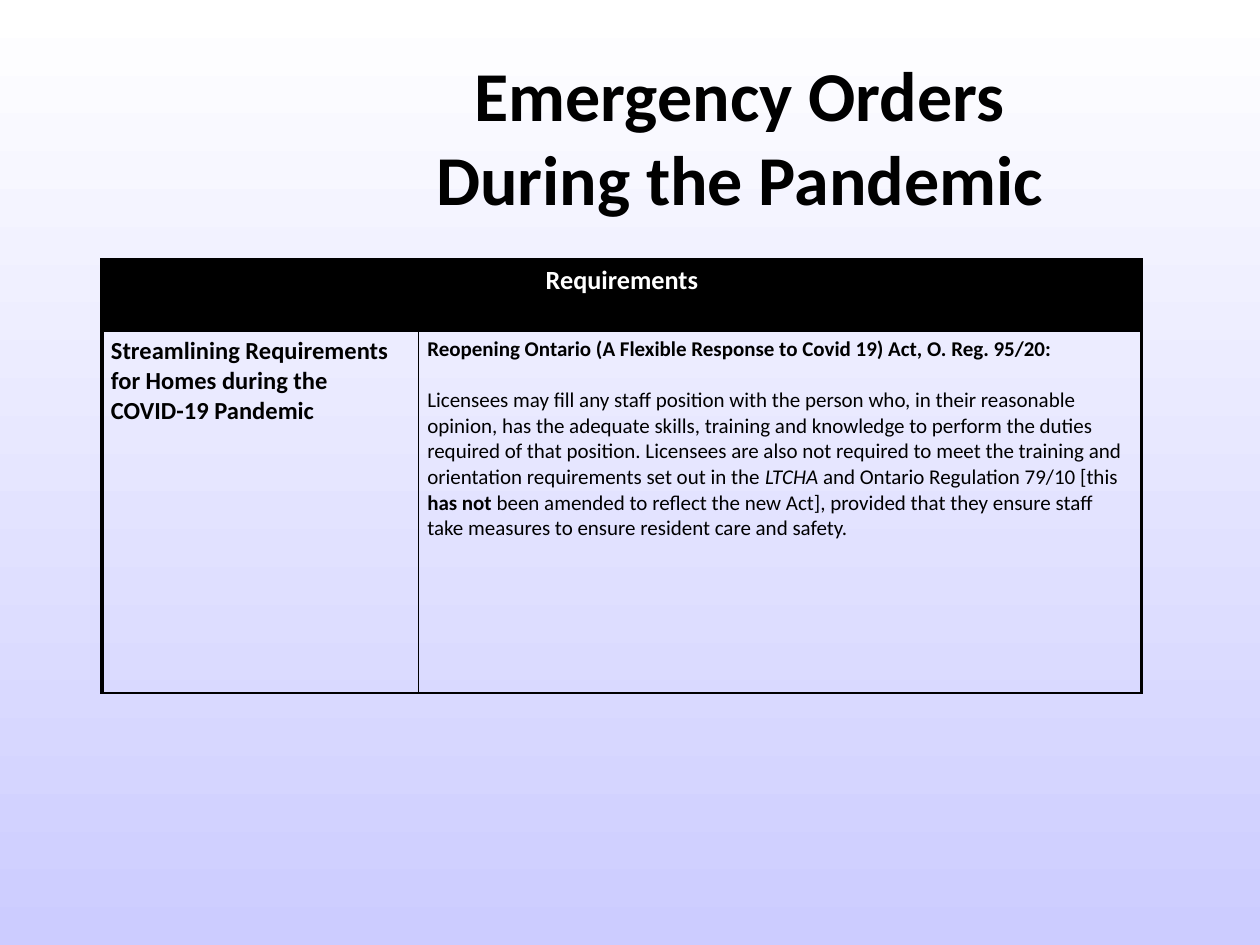
from dataclasses import dataclass

from lxml.etree import SubElement
from pptx import Presentation
from pptx.dml.color import RGBColor
from pptx.enum.text import MSO_ANCHOR, MSO_AUTO_SIZE, PP_ALIGN
from pptx.oxml.ns import qn
from pptx.util import Pt


@dataclass(frozen=True)
class Theme:
    font: str = "Calibri"
    black: RGBColor = RGBColor(0x00, 0x00, 0x00)
    white: RGBColor = RGBColor(0xFF, 0xFF, 0xFF)
    lavender: RGBColor = RGBColor(0xCC, 0xCC, 0xFF)
    title: float = 40
    header: float = 15
    topic: float = 14
    body: float = 12
    thick: float = 2.25
    thin: float = 1


THEME = Theme()

RULE = [
    ("Licensees may fill any staff position with the person who, in their "
     "reasonable opinion, has the adequate skills, training and knowledge to "
     "perform the duties required of that position. Licensees are also not "
     "required to meet the training and orientation requirements set out in "
     "the ", ""),
    ("LTCHA", "i"),
    (" and Ontario Regulation 79/10 [this ", ""),
    ("has not ", "b"),
    ("been amended to reflect the new Act], provided that they ensure staff "
     "take measures to ensure resident care and safety.", ""),
]


def set_background(slide):
    fill = slide.background.fill
    fill.gradient()
    fill.gradient_angle = 270
    for stop, position, color in zip(fill.gradient_stops, (0, 1),
                                     (THEME.white, THEME.lavender)):
        stop.position = position
        stop.color.rgb = color


def write_runs(p, runs, size, color=THEME.black):
    """Add (text, style) runs; the style holds b for bold and i for italic."""
    for text, style in runs:
        r = p.add_run()
        r.text = text
        r.font.name = THEME.font
        r.font.size = Pt(size)
        r.font.bold = "b" in style
        r.font.italic = "i" in style
        r.font.color.rgb = color


def add_title(slide, text):
    sp = slide.shapes.title
    sp.left, sp.top, sp.width, sp.height = Pt(206.6), Pt(26), Pt(432), Pt(104.4)
    tf = sp.text_frame
    tf.word_wrap = True
    tf.auto_size = MSO_AUTO_SIZE.NONE
    tf.vertical_anchor = MSO_ANCHOR.TOP
    p = tf.paragraphs[0]
    p.alignment = PP_ALIGN.CENTER
    write_runs(p, [(text, "b")], THEME.title)


def set_borders(cell, left, top, right, bottom):
    tcPr = cell._tc.get_or_add_tcPr()
    for side, width in zip("LRTB", (left, right, top, bottom)):
        ln = SubElement(tcPr, qn(f"a:ln{side}"), w=str(Pt(width)))
        fill = SubElement(ln, qn("a:solidFill"))
        SubElement(fill, qn("a:srgbClr"), val=str(THEME.black))


def format_cell(cell, borders, color=None):
    set_borders(cell, *borders)
    if color is None:
        cell.fill.background()
    else:
        cell.fill.solid()
        cell.fill.fore_color.rgb = color
    cell.margin_left = cell.margin_right = Pt(5)
    cell.margin_top = cell.margin_bottom = Pt(3)


def add_requirements_table(slide):
    widths, heights = (180.8, 413.2), (41, 206.6)
    table = slide.shapes.add_table(2, 2, Pt(58.4), Pt(148.4), Pt(sum(widths)),
                                   Pt(sum(heights))).table
    table.first_row = table.horz_banding = False
    for column, width in zip(table.columns, widths):
        column.width = Pt(width)
    for row, height in zip(table.rows, heights):
        row.height = Pt(height)

    thick, thin = THEME.thick, THEME.thin
    header, header_end, topic, detail = table.iter_cells()
    header.merge(header_end)
    for cell in (header, header_end):
        format_cell(cell, (thick, thick, thick, thin), THEME.black)
    format_cell(topic, (thick, thin, thin, thin))
    format_cell(detail, (thin, thin, thick, thin))

    p = header.text_frame.paragraphs[0]
    p.alignment = PP_ALIGN.CENTER
    write_runs(p, [("Requirements", "b")], THEME.header, THEME.white)

    write_runs(topic.text_frame.paragraphs[0],
               [("Streamlining Requirements for Homes during the COVID-19 "
                 "Pandemic", "b")], THEME.topic)

    tf = detail.text_frame
    write_runs(tf.paragraphs[0],
               [("Reopening Ontario (A Flexible Response to Covid 19) Act, "
                 "O. Reg. 95/20:", "b")], THEME.body)
    p = tf.add_paragraph()
    p.space_before = Pt(14.6)
    write_runs(p, RULE, THEME.body)


def main():
    prs = Presentation()
    prs.slide_width, prs.slide_height = Pt(720), Pt(540)
    slide = prs.slides.add_slide(prs.slide_layouts.get_by_name("Title Only"))
    set_background(slide)
    add_title(slide, "Emergency Orders During the Pandemic")
    add_requirements_table(slide)
    prs.save("out.pptx")


if __name__ == "__main__":
    main()
